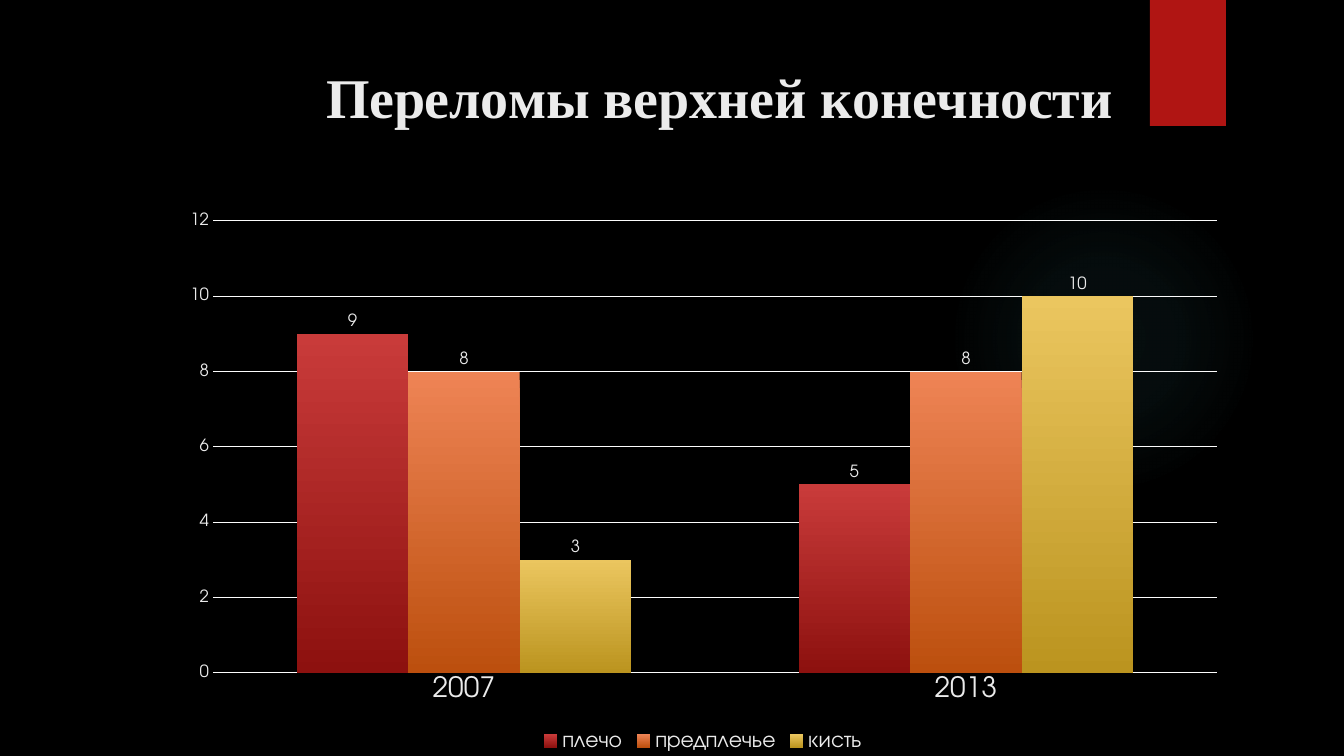
import pptx
import pptx.chart.data
import pptx.dml.color
import pptx.enum.chart
import pptx.enum.shapes
import pptx.oxml
import pptx.oxml.ns
import pptx.util

EMU_PER_PX = 914400 / 100.8
SANS = "TeX Gyre Adventor"
SERIF = "Times New Roman"
PALE = "EBEBEB"
GRID = "FCFCFC"

CHART_BOX = (168, 24, 1070, 732)
PLOT_BOX = (213, 221, 1004, 452)
TITLE_AT = (316, 52)
YEARS = ["2007", "2013"]
FRACTURES = [
    ("плечо", (9, 5), "C93B3A", "8D110F"),
    ("предплечье", (8, 8), "EE8455", "BC4F0E"),
    ("кисть", (3, 10), "EBC65F", "BB941F"),
]


def px(length):
    return pptx.util.Emu(round(length * EMU_PER_PX))


def rgb(value):
    return pptx.dml.color.RGBColor.from_string(value)


def style_font(font, size, color=PALE, name=SANS, bold=False):
    font.size = pptx.util.Pt(size)
    font.color.rgb = rgb(color)
    font.name = name
    font.bold = bold


def style_line(line, color=GRID):
    line.color.rgb = rgb(color)
    line.width = pptx.util.Pt(0.75)


def add_plain_shape(page, kind, box, color):
    shape = page.shapes.add_shape(kind, *map(px, box))
    shape.shadow.inherit = False
    shape.fill.solid()
    shape.fill.fore_color.rgb = rgb(color)
    shape.line.fill.background()
    return shape


def add_glow(page, box, color, stops):
    """Circle whose colour fades outwards; stops are (position, opacity) in percent."""
    glow = add_plain_shape(page, pptx.enum.shapes.MSO_SHAPE.OVAL, box, color)
    marks = "".join(
        f'<a:gs pos="{position * 1000}"><a:srgbClr val="{color}">'
        f'<a:alpha val="{opacity * 1000}"/></a:srgbClr></a:gs>'
        for position, opacity in stops
    )
    gradient = pptx.oxml.parse_xml(
        f'<a:gradFill {pptx.oxml.ns.nsdecls("a")}><a:gsLst>{marks}</a:gsLst>'
        '<a:path path="circle"><a:fillToRect l="50000" t="50000" r="50000" b="50000"/>'
        "</a:path></a:gradFill>"
    )
    solid = glow._element.spPr.find(pptx.oxml.ns.qn("a:solidFill"))
    solid.getparent().replace(solid, gradient)


def place_in_chart(element, index, left, top, width=None, height=None):
    """Give a chart part a fixed place, from slide lengths in px."""
    chart_left, chart_top, chart_width, chart_height = CHART_BOX
    values = {"x": (left - chart_left) / chart_width, "y": (top - chart_top) / chart_height}
    target = ""
    if width:
        target = '<c:layoutTarget val="inner"/>'
        values.update(w=width / chart_width, h=height / chart_height)
    modes = "".join(f'<c:{axis}Mode val="edge"/>' for axis in "xy")
    numbers = "".join(f'<c:{key} val="{value:.4f}"/>' for key, value in values.items())
    layout = pptx.oxml.parse_xml(
        f'<c:layout {pptx.oxml.ns.nsdecls("c")}><c:manualLayout>'
        f"{target}{modes}{numbers}</c:manualLayout></c:layout>"
    )
    for old in element.findall(pptx.oxml.ns.qn("c:layout")):
        element.remove(old)
    element.insert(index, layout)


def set_title(chart, text, **font_format):
    chart.has_title = True
    title = chart.chart_title
    span = title.text_frame.paragraphs[0].add_run()
    span.text = text
    style_font(span.font, **font_format)
    place_in_chart(title._element, 1, *TITLE_AT)


def style_axes(chart):
    none = pptx.enum.chart.XL_TICK_MARK.NONE
    years, counts = chart.category_axis, chart.value_axis
    for axis, size in ((years, 20), (counts, 12)):
        axis.major_tick_mark = axis.minor_tick_mark = none
        style_font(axis.tick_labels.font, size)
    style_line(years.format.line)
    counts.format.line.fill.background()
    counts.minimum_scale, counts.maximum_scale, counts.major_unit = 0, 12, 2
    style_line(counts.major_gridlines.format.line)


def style_series(series, top_color, bottom_color):
    fill = series.format.fill
    fill.gradient()
    fill.gradient_angle = 270
    for stop, color in zip(fill.gradient_stops, (top_color, bottom_color)):
        stop.color.rgb = rgb(color)
    labels = series.data_labels
    labels.show_value = True
    labels.position = pptx.enum.chart.XL_LABEL_POSITION.OUTSIDE_END
    style_font(labels.font, 12)


def add_fracture_chart(page):
    data = pptx.chart.data.CategoryChartData()
    data.categories = YEARS
    for name, values, *_ in FRACTURES:
        data.add_series(name, values)
    kind = pptx.enum.chart.XL_CHART_TYPE.COLUMN_CLUSTERED
    chart = page.shapes.add_chart(kind, *map(px, CHART_BOX), data).chart
    style_font(chart.font, 10, "FFFFFF")
    set_title(chart, "Переломы верхней конечности", size=40, name=SERIF, bold=True)
    style_axes(chart)
    plot = chart.plots[0]
    plot.gap_width, plot.overlap, plot.vary_by_categories = 150, 0, False
    for series, (_, _, top_color, bottom_color) in zip(plot.series, FRACTURES):
        style_series(series, top_color, bottom_color)
    place_in_chart(chart._chartSpace.chart.plotArea, 0, *PLOT_BOX)
    chart.has_legend = True
    chart.legend.position = pptx.enum.chart.XL_LEGEND_POSITION.BOTTOM
    chart.legend.include_in_layout = False
    style_font(chart.legend.font, 16)


def main():
    deck = pptx.Presentation()
    deck.slide_width, deck.slide_height = px(1344), px(756)
    page = deck.slides.add_slide(deck.slide_layouts[6])
    page.background.fill.solid()
    page.background.fill.fore_color.rgb = rgb("000000")
    add_glow(page, (949, 184, 310, 310), "50B9C1", [(0, 7), (36, 6), (69, 0)])
    add_plain_shape(page, pptx.enum.shapes.MSO_SHAPE.RECTANGLE, (1150, 0, 76, 126), "B01513")
    add_fracture_chart(page)
    deck.save("out.pptx")


if __name__ == "__main__":
    main()
